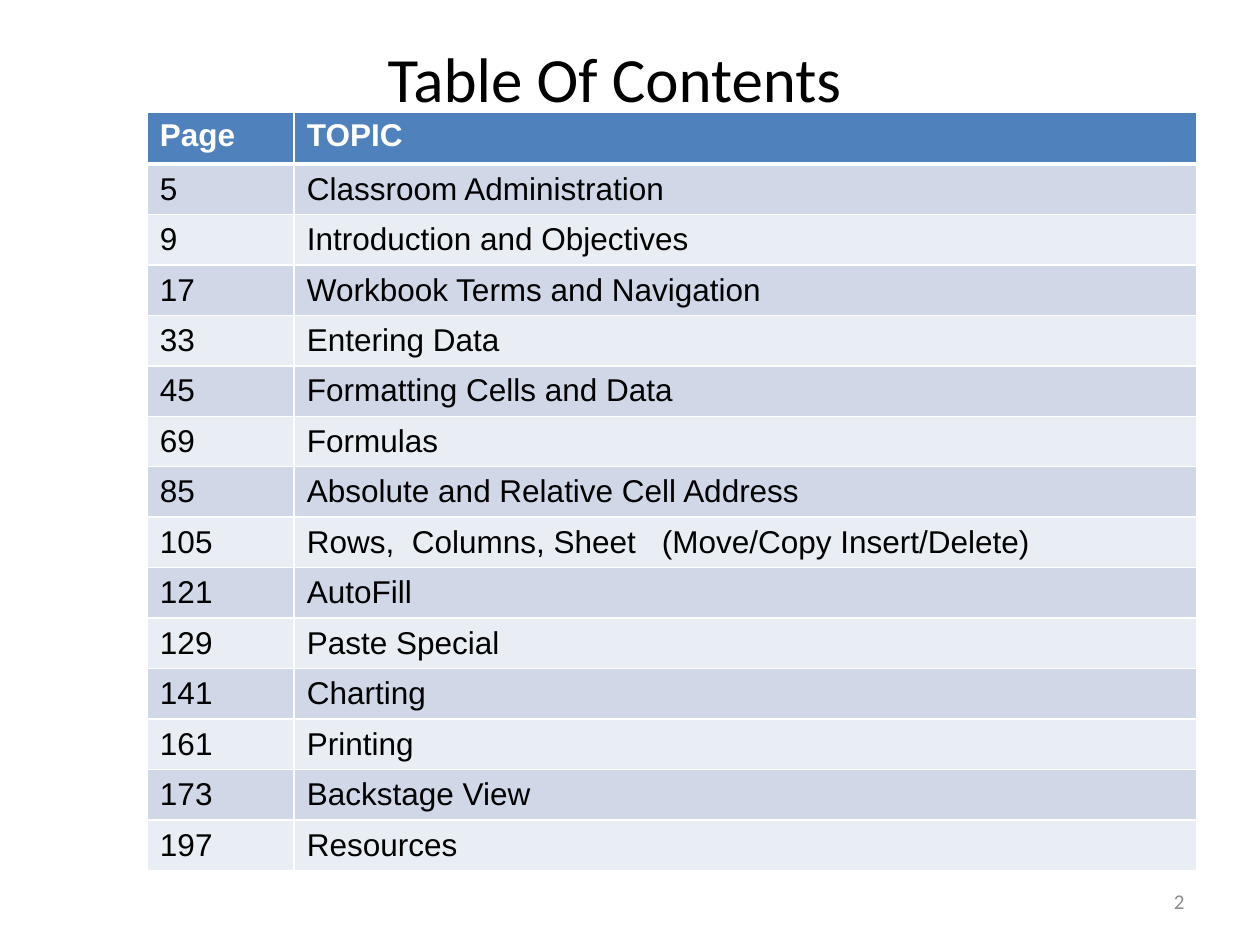
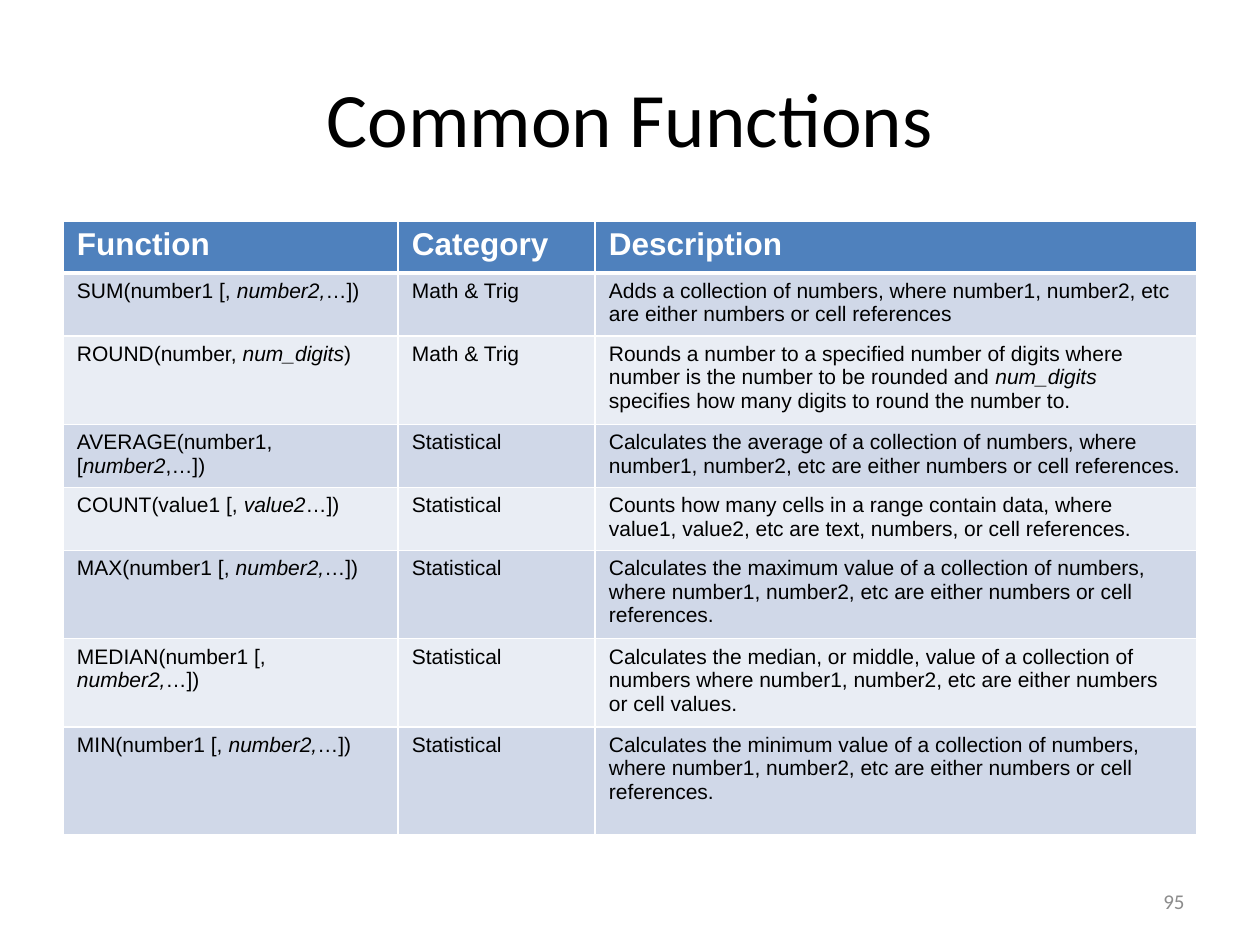
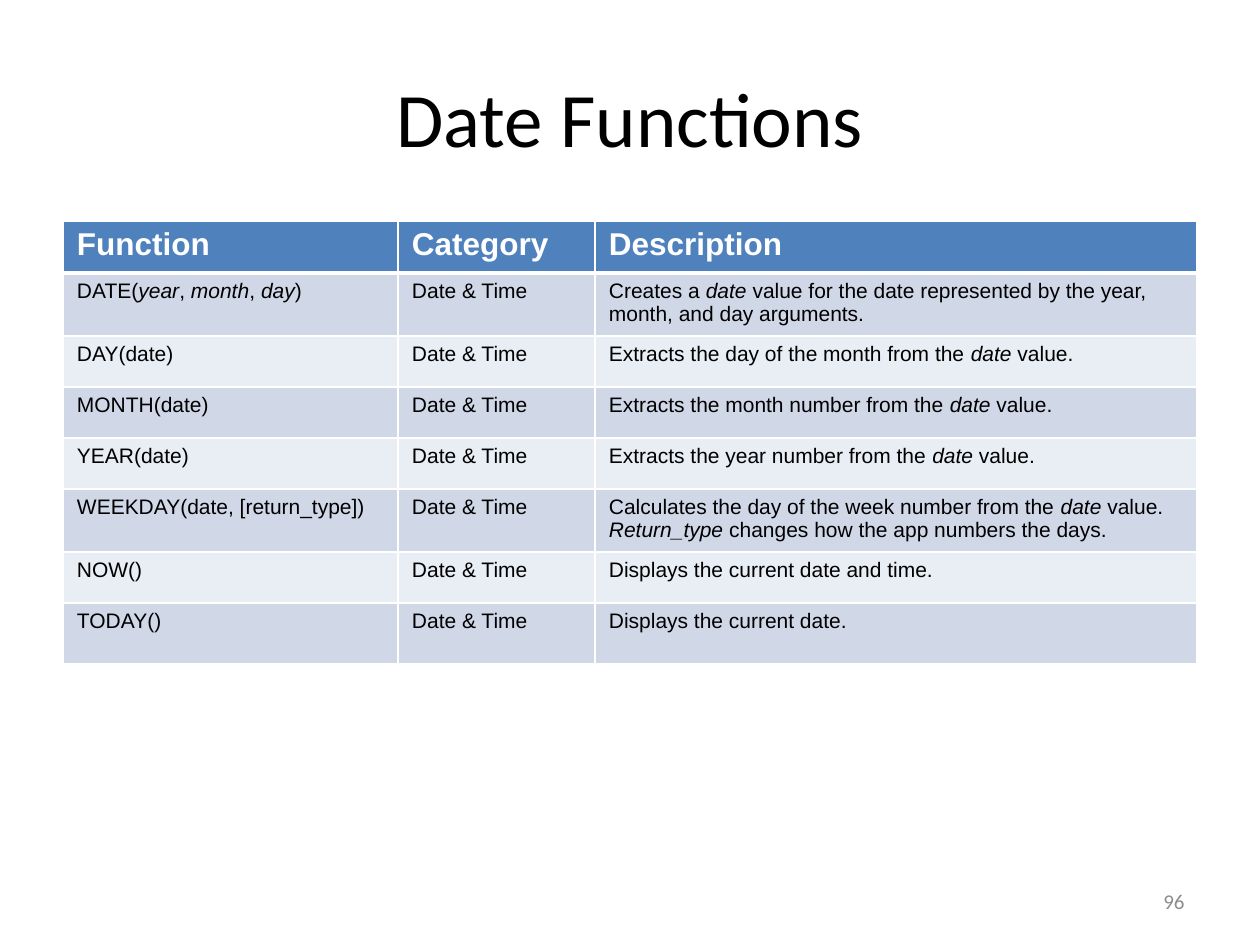
from lxml.etree import SubElement as Sub
from pptx import Presentation
from pptx.dml.color import RGBColor as RGB
from pptx.enum.text import MSO_ANCHOR as Anchor, PP_ALIGN as Align
from pptx.oxml.ns import qn
from pptx.util import Pt

SCALE = 914400 / 126  # EMU in one px
WHITE = RGB(0xFF, 0xFF, 0xFF)
BLACK = RGB(0x00, 0x00, 0x00)
GREY = RGB(0x8C, 0x8C, 0x8C)
BLUE = RGB(0x4F, 0x81, 0xBD)
BANDS = RGB(0xD0, 0xD8, 0xE8), RGB(0xE9, 0xED, 0xF4)
HEAD_ROW = 52
THIN, THICK = 1, 3


def px(size):
    return round(size * SCALE)


class Deck:
    """Holds the shared style and the current slide."""

    def __init__(self):
        self.prs = Presentation()
        self.prs.slide_width, self.prs.slide_height = px(1260), px(945)
        self.slide = None

    def start(self, title, page, box=(63, 38, 1134, 157), size=44):
        self.slide = self.prs.slides.add_slide(self.prs.slide_layouts[5])
        self.title(title, box, size)
        self.page(page)

    def text(self, para, text, size, color, font="Arial", bold=False):
        """Add runs; parts between asterisks are italic."""
        for i, part in enumerate(text.split("*")):
            if part:
                run = para.add_run()
                run.text = part
                face = run.font
                face.name, face.size, face.bold = font, Pt(size), bold
                face.italic = i % 2 == 1
                face.color.rgb = color

    def title(self, text, box, size):
        shape = self.slide.shapes.title
        shape.left, shape.top, shape.width, shape.height = map(px, box)
        frame = shape.text_frame
        frame.vertical_anchor = Anchor.MIDDLE
        para = frame.paragraphs[0]
        para.alignment = Align.CENTER
        self.text(para, text, size, BLACK, "Calibri")

    def page(self, number):
        box = self.slide.shapes.add_textbox(*map(px, (903, 876, 294, 50)))
        frame = box.text_frame
        frame.word_wrap = True
        frame.vertical_anchor = Anchor.MIDDLE
        para = frame.paragraphs[0]
        para.alignment = Align.RIGHT
        self.text(para, str(number), 12, GREY, "Calibri")

    def tabs(self, para, stops):
        tablist = Sub(para._p.get_or_add_pPr(), qn("a:tabLst"))
        for stop in stops:
            Sub(tablist, qn("a:tab"), pos=str(px(stop)), algn="l")

    def edges(self, cell, top, bottom):
        props = cell._tc.get_or_add_tcPr()
        for side, width in zip("LRTB", (THIN, THIN, top, bottom)):
            line = Sub(props, qn(f"a:ln{side}"), w=str(Pt(width)))
            fill = Sub(line, qn("a:solidFill"))
            Sub(fill, qn("a:srgbClr"), val=str(WHITE))

    def table(self, left, top, cols, head, rows, heights, size, pad, anchor, stops=()):
        heights = [HEAD_ROW, *heights]
        frame = self.slide.shapes.add_table(
            len(heights), len(cols), px(left), px(top), px(sum(cols)), px(sum(heights)))
        grid = frame.table
        for col, width in zip(grid.columns, cols):
            col.width = px(width)
        for row, height in zip(grid.rows, heights):
            row.height = px(height)
        for r, texts in enumerate([head, *rows]):
            for c, text in enumerate(texts):
                cell = grid.cell(r, c)
                cell.margin_left = cell.margin_right = px(pad)
                self.edges(cell, THICK if r == 1 else THIN, THIN if r else THICK)
                cell.fill.solid()
                cell.fill.fore_color.rgb = BANDS[(r - 1) % 2] if r else BLUE
                cell.vertical_anchor = anchor if r else Anchor.TOP
                para = cell.text_frame.paragraphs[0]
                if "\t" in text:
                    self.tabs(para, stops)
                if r:
                    self.text(para, text, size, BLACK)
                else:
                    self.text(para, text, 18, WHITE, bold=True)

    def funcs(self, rows, heights):
        self.table(63, 221, (335, 197, 602), ("Function", "Category", "Description"),
                   rows, heights, 12, 14, Anchor.TOP)


TOPICS = [
    ("5", "Classroom Administration"),
    ("9", "Introduction and Objectives"),
    ("17", "Workbook Terms and Navigation"),
    ("33", "Entering Data"),
    ("45", "Formatting Cells and Data"),
    ("69", "Formulas"),
    ("85", "Absolute and Relative Cell Address"),
    ("105", "Rows,\tColumns, Sheet\t(Move/Copy Insert/Delete)"),
    ("121", "AutoFill"),
    ("129", "Paste Special"),
    ("141", "Charting"),
    ("161", "Printing"),
    ("173", "Backstage View"),
    ("197", "Resources"),
]

MATH, STAT, DATE = "Math & Trig", "Statistical", "Date & Time"

COMMON = [
    ("SUM(number1 [, *number2,*…])", MATH,
     "Adds a collection of numbers, where number1, number2, etc "
     "are either numbers or cell references"),
    ("ROUND(number, *num_digits*)", MATH,
     "Rounds a number to a specified number of digits where number is the number "
     "to be rounded and *num_digits* specifies how many digits to round the number to."),
    ("AVERAGE(number1, [*number2*,…])", STAT,
     "Calculates the average of a collection of numbers, where number1, number2, etc "
     "are either numbers or cell references."),
    ("COUNT(value1 [, *value2*…])", STAT,
     "Counts how many cells in a range contain data, where value1, value2, etc "
     "are text, numbers, or cell references."),
    ("MAX(number1 [, *number2,*…])", STAT,
     "Calculates the maximum value of a collection of numbers, where number1, number2, "
     "etc are either numbers or cell references."),
    ("MEDIAN(number1 [, *number2,*…])", STAT,
     "Calculates the median, or middle, value of a collection of numbers where number1, "
     "number2, etc are either numbers or cell values."),
    ("MIN(number1 [, *number2,*…])", STAT,
     "Calculates the minimum value of a collection of numbers, where number1, number2, "
     "etc are either numbers or cell references."),
]

DATES = [
    ("DATE(*year*, *month*, *day*)", DATE,
     "Creates a *date* value for the date represented by the year, "
     "month, and day arguments."),
    ("DAY(date)", DATE, "Extracts the day of the month from the *date* value."),
    ("MONTH(date)", DATE, "Extracts the month number from the *date* value."),
    ("YEAR(date)", DATE, "Extracts the year number from the *date* value."),
    ("WEEKDAY(date, [return_type])", DATE,
     "Calculates the day of the week number from the *date* value. "
     "*Return_type *changes how the app numbers the days."),
    ("NOW()", DATE, "Displays the current date and time."),
    ("TODAY()", DATE, "Displays the current date."),
]


def main():
    deck = Deck()

    # Contents
    deck.start("Table Of Contents", 2, (63, 38, 1103, 78), 36)
    deck.table(147, 112, (147, 903), ("Page", "TOPIC"), TOPICS, [48] * len(TOPICS),
               18, 13, Anchor.MIDDLE, (105, 355))

    # Common functions
    deck.start("Common Functions", 95)
    deck.funcs(COMMON, (59, 83, 60, 60, 83, 83, 108))

    # Date functions
    deck.start("Date Functions", 96)
    deck.funcs(DATES, (59, 51, 51, 51, 60, 51, 61))

    deck.prs.save("out.pptx")


if __name__ == "__main__":
    main()
